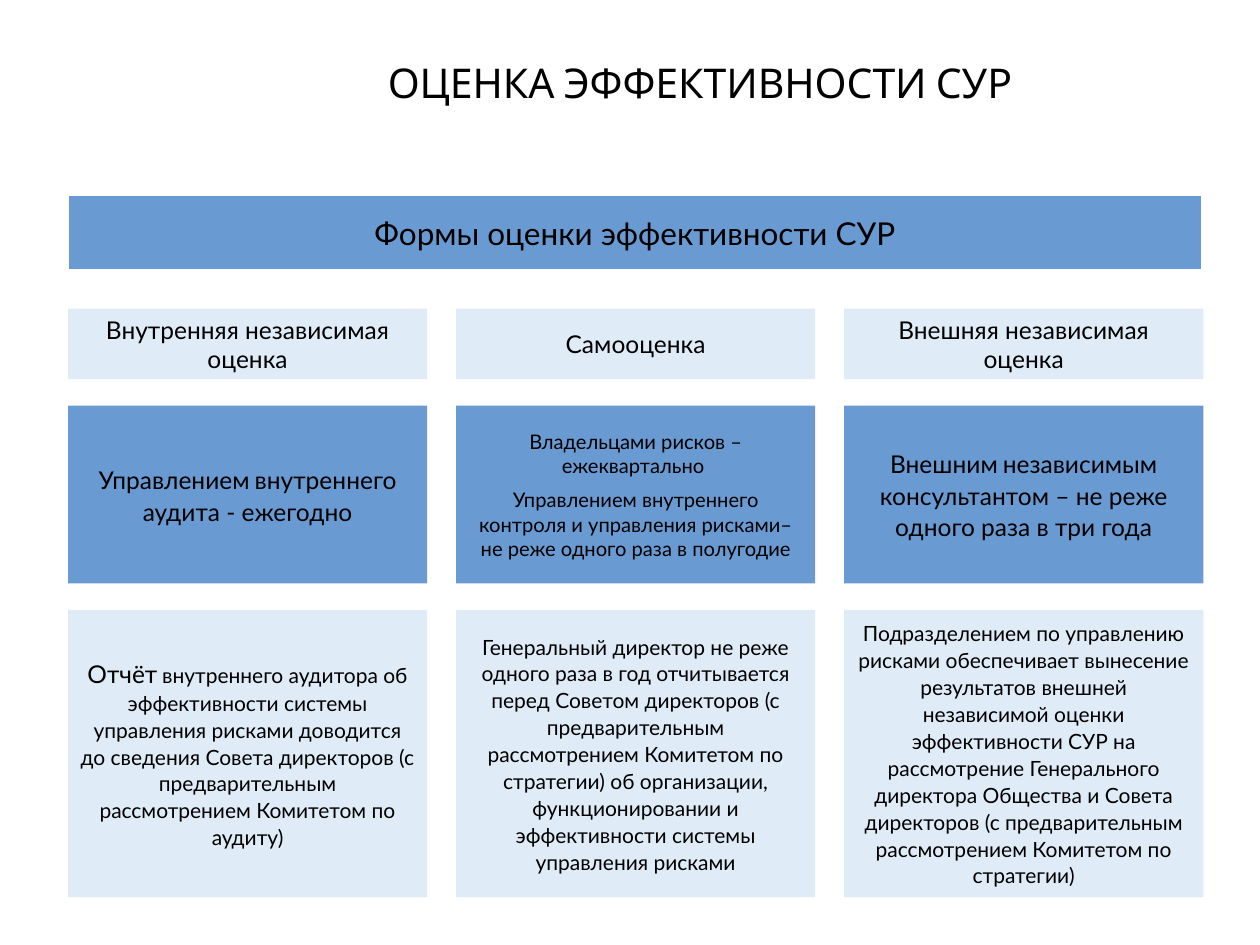
"""Build the slide on forms of assessing risk management effectiveness."""
from pptx import Presentation
from pptx.dml.color import RGBColor
from pptx.enum.shapes import MSO_SHAPE
from pptx.enum.text import MSO_ANCHOR, PP_ALIGN
from pptx.util import Inches, Pt

BLUE = RGBColor(0x6A, 0x9A, 0xD2)
PALE = RGBColor(0xDF, 0xEB, 0xF6)
WHITE = RGBColor(0xFF, 0xFF, 0xFF)
BLACK = RGBColor(0, 0, 0)

LEFT, COLUMN_WIDTH, COLUMN_STEP = 0.54, 2.85, 3.08
GAP = (" ", 12, "Arial Narrow")
BODY = {"spacing": 1.07, "after": 6.8}

FORMS = ["Внутренняя независимая оценка", "Самооценка", "Внешняя независимая оценка"]
ASSESSORS = [
    ([[("Управлением", 14), GAP, ("внутреннего аудита - ежегодно", 14)]], BODY),
    ([[("Владельцами рисков – ежеквартально ", 11.5)],
      [("Управлением внутреннего контроля и управления рисками– "
        "не реже одного раза в полугодие", 11.5)]], {"after": 6}),
    ([[("Внешним", 14), GAP,
       ("независимым консультантом – не реже одного раза в три года", 14)]], BODY),
]
REPORTS = [
    [("Отчёт", 14), GAP,
     ("внутреннего аудитора об эффективности системы управления рисками "
      "доводится до сведения Совета директоров (с предварительным "
      "рассмотрением Комитетом по аудиту)", 12)],
    [("Генеральный директор не реже одного раза в год отчитывается перед "
      "Советом директоров (с предварительным рассмотрением Комитетом по "
      "стратегии) об организации, функционировании и эффективности системы "
      "управления рисками", 12)],
    [("Подразделением по управлению рисками обеспечивает вынесение "
      "результатов внешней независимой оценки эффективности СУР на "
      "рассмотрение Генерального директора Общества и Совета директоров (с "
      "предварительным рассмотрением Комитетом по стратегии)", 12)],
]


def write_text(shape, paragraphs, spacing=None, after=None):
    """Write centred paragraphs of (text, size[, font]) runs into a shape."""
    frame = shape.text_frame
    frame.word_wrap = True
    frame.vertical_anchor = MSO_ANCHOR.MIDDLE
    for index, pieces in enumerate(paragraphs):
        paragraph = frame.add_paragraph() if index else frame.paragraphs[0]
        paragraph.alignment = PP_ALIGN.CENTER
        if spacing:
            paragraph.line_spacing = spacing
        if after:
            paragraph.space_after = Pt(after)
        for text, size, *font in pieces:
            run = paragraph.add_run()
            run.text = text
            run.font.size = Pt(size)
            run.font.name = font[0] if font else "Lato"
            run.font.color.rgb = BLACK


def add_title(slide, text):
    """Add the slide heading."""
    title = slide.shapes.add_textbox(Inches(1.11), Inches(0.28), Inches(8.89), Inches(0.74))
    write_text(title, [[(text, 23.4, "Cabin")]])


def add_panel(slide, left, top, width, height, fill, paragraphs, outline=None, **text_format):
    """Add a filled rectangle with text."""
    panel = slide.shapes.add_shape(
        MSO_SHAPE.RECTANGLE, Inches(left), Inches(top), Inches(width), Inches(height))
    panel.shadow.inherit = False
    panel.fill.solid()
    panel.fill.fore_color.rgb = fill
    if outline is None:
        panel.line.fill.background()
    else:
        panel.line.color.rgb = outline
        panel.line.width = Pt(0.75)
    write_text(panel, paragraphs, **text_format)


def add_row(slide, top, height, fill, cells):
    """Add one row of equally spaced panels from (paragraphs, format) cells."""
    for column, (paragraphs, text_format) in enumerate(cells):
        left = LEFT + column * COLUMN_STEP
        add_panel(slide, left, top, COLUMN_WIDTH, height, fill, paragraphs, **text_format)


def main():
    """Build and save the slide."""
    deck = Presentation()
    deck.slide_width, deck.slide_height = Inches(10), Inches(7.5)
    slide = deck.slides.add_slide(deck.slide_layouts[6])
    add_title(slide, "ОЦЕНКА ЭФФЕКТИВНОСТИ СУР")
    add_panel(slide, LEFT, 1.55, 9, 0.59, BLUE,
              [[("Формы оценки эффективности СУР", 18)]], outline=WHITE)
    add_row(slide, 2.45, 0.56, PALE, [([[(form, 14)]], {}) for form in FORMS])
    add_row(slide, 3.22, 1.41, BLUE, ASSESSORS)
    add_row(slide, 4.84, 2.28, PALE, [([report], BODY) for report in REPORTS])
    deck.save("out.pptx")


if __name__ == "__main__":
    main()
